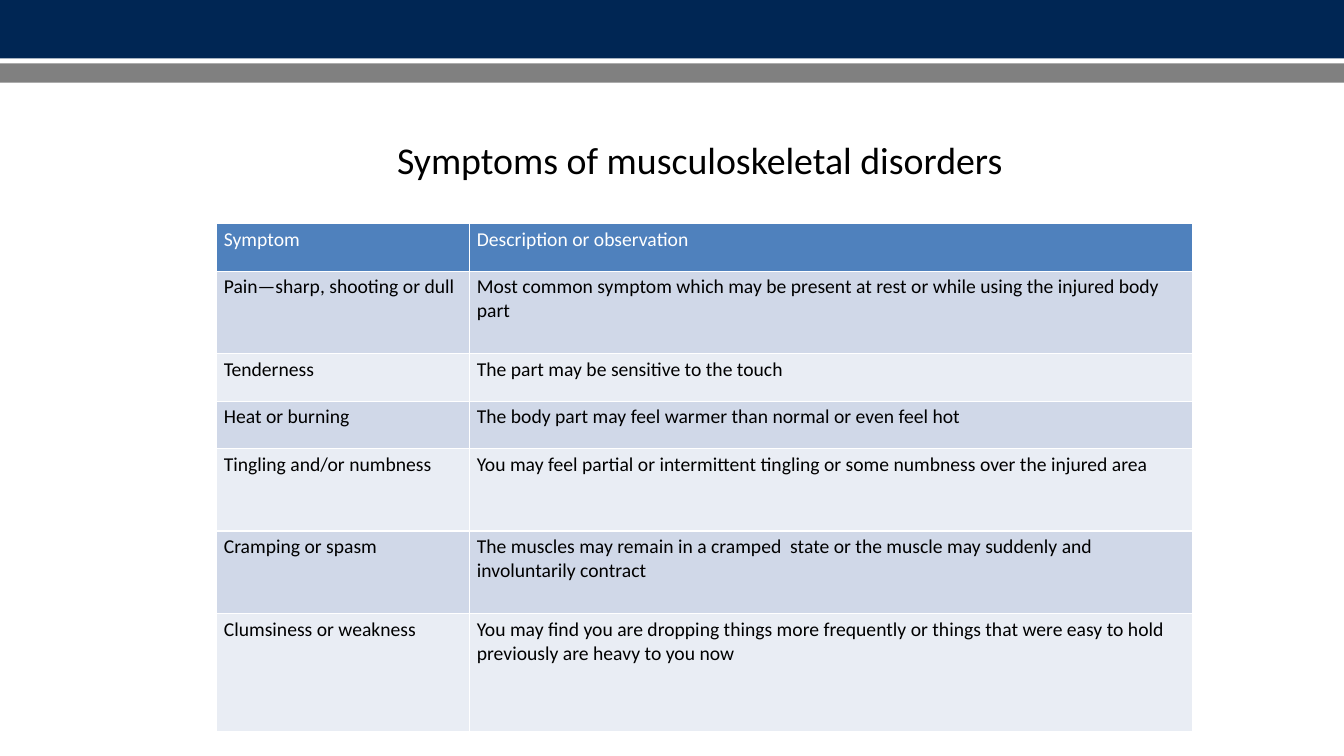
from dataclasses import dataclass

from lxml import etree
from pptx import Presentation
from pptx.dml.color import RGBColor
from pptx.enum.shapes import MSO_SHAPE
from pptx.enum.text import MSO_ANCHOR, PP_ALIGN
from pptx.oxml.ns import qn
from pptx.util import Pt

RECTANGLE = MSO_SHAPE.RECTANGLE
MIDDLE = MSO_ANCHOR.MIDDLE
LEFT, CENTER = PP_ALIGN.LEFT, PP_ALIGN.CENTER
EMU_PER_PX = 9144
BLANK_LAYOUT = 6


@dataclass(frozen=True)
class Theme:
    """Colours, font and type sizes of the slide."""
    font: str = "Calibri"
    title_size: int = 27
    table_size: int = 14
    navy: str = "002654"
    grey: str = "808080"
    black: str = "000000"
    white: str = "FFFFFF"
    header: str = "4F81BD"
    bands: tuple = ("D0D8E8", "E9EDF4")
    border_points: int = 1


THEME = Theme()

COLUMN_WIDTHS = (251, 717)
SYMPTOM_ROWS = (
    (47, "Symptom", "Description or observation"),
    (82, "Pain—sharp, shooting or dull",
     "Most common symptom which may be present at rest or while using the injured body part"),
    (47, "Tenderness", "The part may be sensitive to the touch"),
    (47, "Heat or burning", "The body part may feel warmer than normal or even feel hot"),
    (82, "Tingling and/or numbness",
     "You may feel partial or intermittent tingling or some numbness over the injured area"),
    (82, "Cramping or spasm",
     "The muscles may remain in a cramped  state or the muscle may suddenly and "
     "involuntarily contract"),
    (117, "Clumsiness or weakness",
     "You may find you are dropping things more frequently or things that were easy to hold "
     "previously are heavy to you now"),
)


def px(length):
    """Turn a length in px into EMU."""
    return length * EMU_PER_PX


def set_text(text_frame, text, *, size, color=THEME.black, align=LEFT):
    """Write one formatted paragraph into a text frame."""
    text_frame.word_wrap = True
    paragraph = text_frame.paragraphs[0]
    paragraph.alignment = align
    run = paragraph.add_run()
    run.text = text
    run.font.name = THEME.font
    run.font.size = Pt(size)
    run.font.bold = False
    run.font.color.rgb = RGBColor.from_string(color)


def add_band(slide, top, height, color):
    """Add a plain band across the full slide width."""
    band = slide.shapes.add_shape(RECTANGLE, 0, px(top), px(1333), px(height))
    band.shadow.inherit = False
    band.fill.solid()
    band.fill.fore_color.rgb = RGBColor.from_string(color)
    band.line.fill.background()


def add_title(slide, text):
    """Add the centred slide title."""
    box = slide.shapes.add_textbox(px(319), px(79), px(750), px(159))
    box.text_frame.vertical_anchor = MIDDLE
    set_text(box.text_frame, text, size=THEME.title_size, align=CENTER)


def set_borders(cell):
    """Draw a thin white border on every side of a cell."""
    properties = cell._tc.get_or_add_tcPr()
    for side in ("a:lnL", "a:lnR", "a:lnT", "a:lnB"):
        line = etree.SubElement(properties, qn(side), w=str(Pt(THEME.border_points)))
        fill = etree.SubElement(line, qn("a:solidFill"))
        etree.SubElement(fill, qn("a:srgbClr"), val=THEME.white)


def format_cell(cell, text, fill, color):
    """Fill, border and write one table cell."""
    cell.margin_left = cell.margin_right = px(7)
    cell.margin_top = cell.margin_bottom = px(4)
    set_borders(cell)
    cell.fill.solid()
    cell.fill.fore_color.rgb = RGBColor.from_string(fill)
    set_text(cell.text_frame, text, size=THEME.table_size, color=color)


def add_symptom_table(slide):
    """Add the table with a header and alternating row fills."""
    total_height = sum(height for height, *_ in SYMPTOM_ROWS)
    table = slide.shapes.add_table(
        len(SYMPTOM_ROWS), len(COLUMN_WIDTHS),
        px(215), px(222), px(sum(COLUMN_WIDTHS)), px(total_height)).table
    for column, width in zip(table.columns, COLUMN_WIDTHS):
        column.width = px(width)
    for index, (height, *texts) in enumerate(SYMPTOM_ROWS):
        is_header = index == 0
        fill = THEME.header if is_header else THEME.bands[(index - 1) % 2]
        color = THEME.white if is_header else THEME.black
        row = table.rows[index]
        row.height = px(height)
        for cell, text in zip(row.cells, texts):
            format_cell(cell, text, fill, color)


def main():
    """Build the slide and save it."""
    presentation = Presentation()
    presentation.slide_width = px(1333)
    presentation.slide_height = px(750)
    slide = presentation.slides.add_slide(presentation.slide_layouts[BLANK_LAYOUT])
    add_band(slide, 0, 58, THEME.navy)
    add_band(slide, 63, 19, THEME.grey)
    add_title(slide, "Symptoms of musculoskeletal disorders")
    add_symptom_table(slide)
    presentation.save("out.pptx")


if __name__ == "__main__":
    main()
